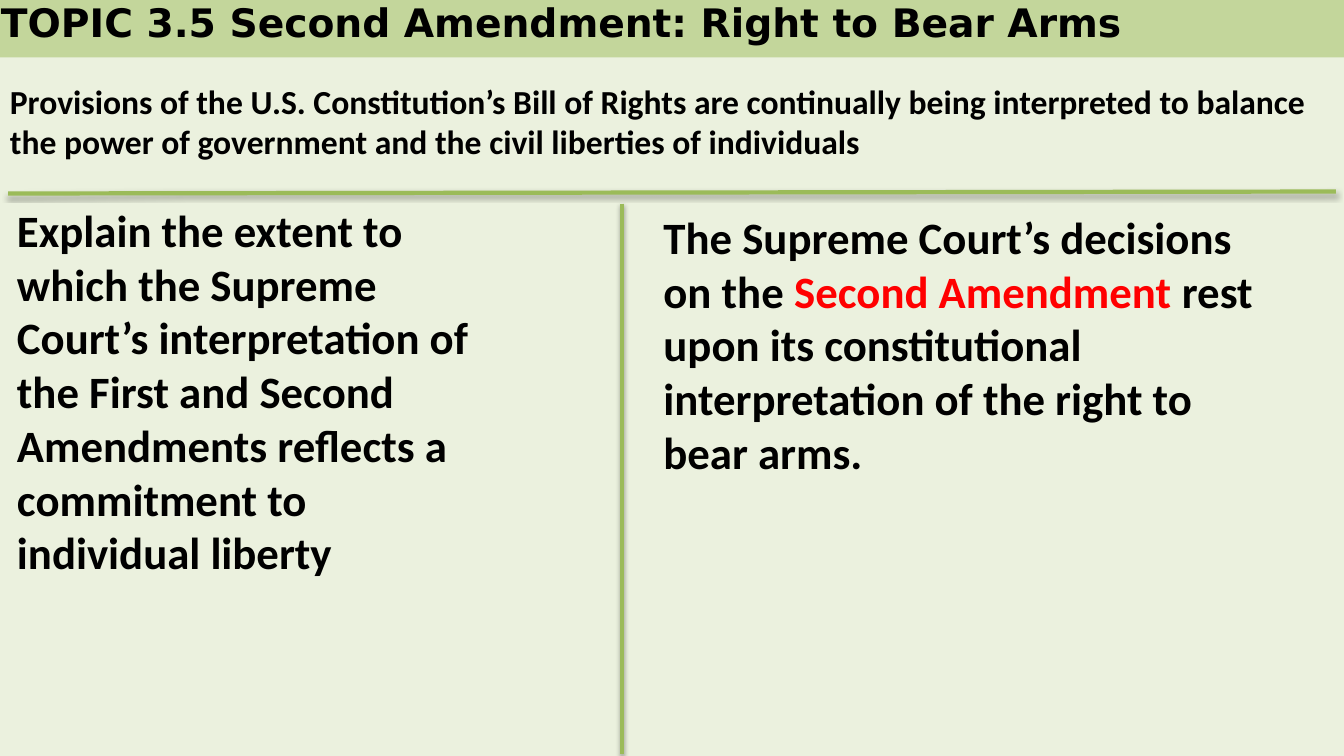
"""Build a slide on the Second Amendment and the right to bear arms."""
from lxml import etree
from pptx import Presentation
from pptx.dml.color import RGBColor
from pptx.enum.shapes import MSO_CONNECTOR
from pptx.enum.text import MSO_ANCHOR, MSO_AUTO_SIZE, PP_ALIGN
from pptx.oxml.ns import qn
from pptx.util import Inches, Pt

COLORS = {
    "background": "EBF1DE",
    "band": "C3D69B",
    "rule": "9BBB59",
    "text": "000000",
    "accent": "FF0000",
}
DEFAULT_INSETS = (0.1, 0.05, 0.1, 0.05)


def rgb(name):
    return RGBColor.from_string(COLORS[name])


def fill_text(tf, runs, size, font="Calibri", insets=DEFAULT_INSETS, before=0):
    tf.word_wrap = True
    tf.auto_size = MSO_AUTO_SIZE.NONE
    tf.vertical_anchor = MSO_ANCHOR.TOP
    tf.margin_left, tf.margin_top, tf.margin_right, tf.margin_bottom = map(Inches, insets)
    p = tf.paragraphs[0]
    p.alignment = PP_ALIGN.LEFT
    p.space_before = Pt(before)
    for text, color in runs:
        r = p.add_run()
        r.text = text
        r.font.name = font
        r.font.size = Pt(size)
        r.font.bold = True
        r.font.color.rgb = rgb(color)


def place(sp, left, top, width, height):
    sp.left, sp.top = Inches(left), Inches(top)
    sp.width, sp.height = Inches(width), Inches(height)


def add_title(slide, text):
    title = slide.shapes.title
    place(title, 0, -0.03, 13.33, 0.6)
    title.fill.solid()
    title.fill.fore_color.rgb = rgb("band")
    fill_text(title.text_frame, [(text, "text")], 28, "DejaVu Sans", (0.01, 0.01, 0, 0), 1)


def add_text(slide, box, runs, size, **layout):
    sp = slide.shapes.add_textbox(*map(Inches, box))
    fill_text(sp.text_frame, runs, size, **layout)


def add_rule(slide, start, end):
    line = slide.shapes.add_connector(
        MSO_CONNECTOR.STRAIGHT, *map(Inches, (*start, *end)))
    line.line.color.rgb = rgb("rule")
    line.line.width = Pt(3)
    effects = etree.SubElement(line._element.spPr, qn("a:effectLst"))
    shadow = etree.SubElement(
        effects, qn("a:outerShdw"), blurRad=str(Pt(3.1)), dist=str(Pt(1.8)),
        dir="5400000", rotWithShape="0")
    color = etree.SubElement(shadow, qn("a:srgbClr"), val=COLORS["text"])
    etree.SubElement(color, qn("a:alpha"), val="35000")


def main():
    prs = Presentation()
    prs.slide_width, prs.slide_height = Inches(13.33), Inches(7.5)
    slide = prs.slides.add_slide(prs.slide_layouts[5])
    slide.background.fill.solid()
    slide.background.fill.fore_color.rgb = rgb("background")

    add_title(slide, "TOPIC 3.5 Second Amendment: Right to Bear Arms")
    add_text(slide, (6.57, 2, 6.68, 2.77), [
        ("The Supreme Court’s decisions on the ", "text"),
        ("Second Amendment", "accent"),
        (" rest upon its constitutional interpretation of the right to bear arms.", "text"),
    ], 32, insets=(0.01, 0.08, 0.66, 0), before=4.8)
    add_text(slide, (0, 0.75, 13.17, 0.91), [
        ("Provisions of the U.S. Constitution’s Bill of Rights are continually being "
         "interpreted to balance the power of government and the civil liberties of "
         "individuals", "text"),
    ], 24)
    add_text(slide, (0.07, 1.96, 4.92, 3.87), [
        ("Explain the extent to which the Supreme Court’s interpretation of the First "
         "and Second Amendments reflects a commitment to individual liberty", "text"),
    ], 32)
    add_rule(slide, (0.08, 1.92), (13.25, 1.9))
    add_rule(slide, (6.17, 2.02), (6.17, 7.48))
    prs.save("out.pptx")


if __name__ == "__main__":
    main()
